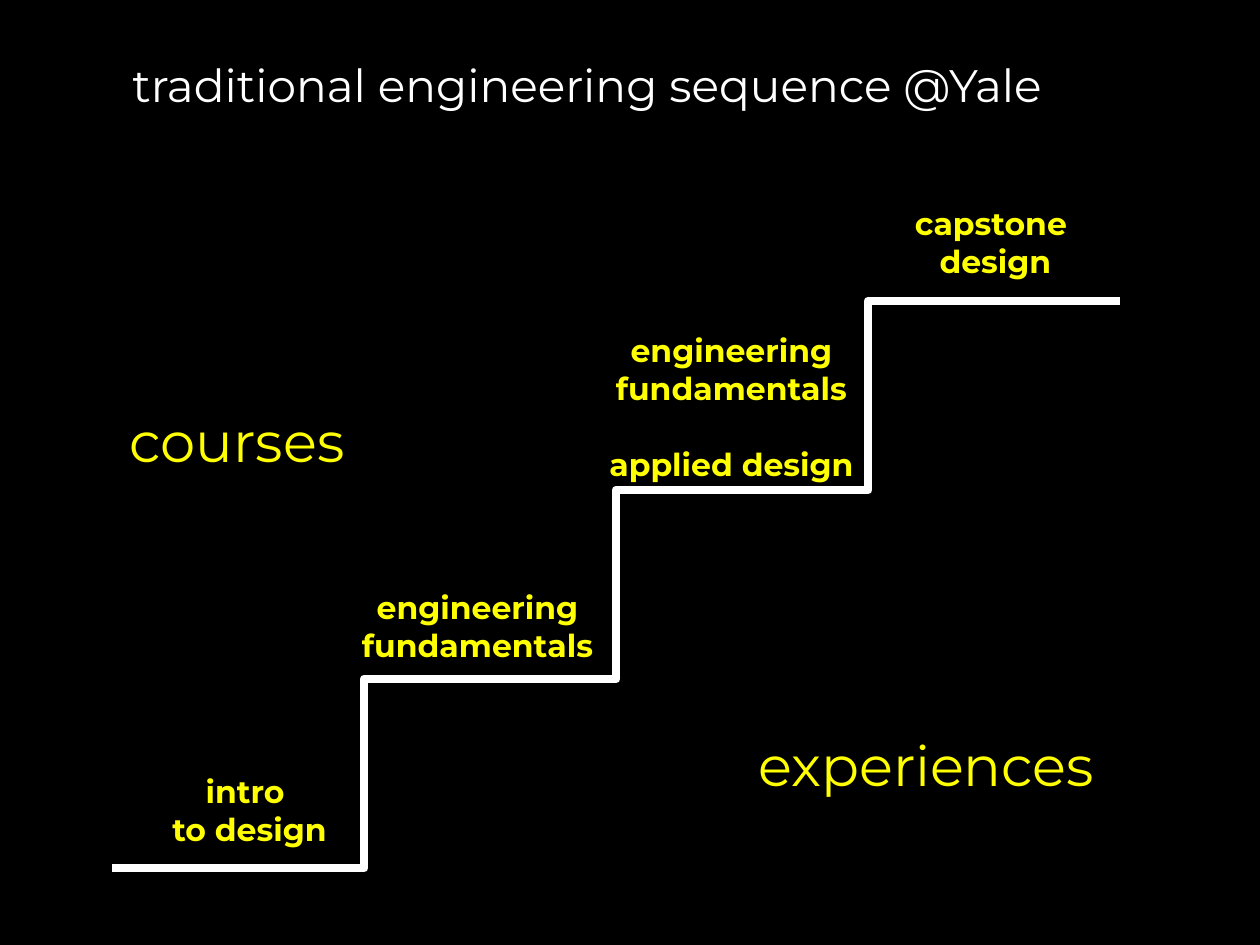
from dataclasses import dataclass

from lxml import etree
from pptx import Presentation
from pptx import util as u
from pptx.dml import color
from pptx.enum import shapes, text
from pptx.oxml import ns


@dataclass(frozen=True)
class Theme:
    face: str = "Montserrat"
    back: str = "000000"
    white: str = "FFFFFF"
    gold: str = "FFFF00"
    head: int = 26
    side: int = 32
    step: int = 18
    line: int = 5


THEME = Theme()
START = (0.89, 6.89)
RUN, RISE = 2.0, 1.5
STEPS = [
    (["intro ", "to design"], (1.24, 6.08, 1.48, 0.71)),
    (["engineering", "fundamentals"], (2.75, 4.62, 2.08, 0.71)),
    (["engineering", "fundamentals", "applied design"], (4.7, 2.58, 2.21, 1.31)),
    (["capstone ", "design"], (6.91, 1.57, 1.98, 0.71)),
]
SIDES = [
    ("courses", (0.93, 3.18, 2.16, 0.64)),
    ("experiences", (5.92, 5.75, 3.21, 0.64)),
]


def inches(box):
    return [u.Inches(v) for v in box]


def apply(item, form):
    for key, value in form.items():
        setattr(item, key, value)


def style(para, size, tint, bold=False, align=text.PP_ALIGN.LEFT):
    para.alignment = align
    for run in para.runs:
        apply(run.font, {"name": THEME.face, "size": u.Pt(size), "bold": bold})
        run.font.color.rgb = color.RGBColor.from_string(tint)


def add_title(slide, words, box):
    title = slide.shapes.title
    apply(title, dict(zip(("left", "top", "width", "height"), inches(box))))
    frame = title.text_frame
    frame.text = words
    apply(frame, {
        "word_wrap": True,
        "auto_size": text.MSO_AUTO_SIZE.NONE,
        "vertical_anchor": text.MSO_ANCHOR.MIDDLE,
    })
    style(frame.paragraphs[0], THEME.head, THEME.white)


def add_text(slide, lines, box):
    frame = slide.shapes.add_textbox(*inches(box)).text_frame
    frame.text = "\n".join(lines)
    apply(frame, {
        "word_wrap": False,
        "auto_size": text.MSO_AUTO_SIZE.SHAPE_TO_FIT_TEXT,
    })
    return frame.paragraphs


def add_side(slide, words, box):
    style(add_text(slide, [words], box)[0], THEME.side, THEME.gold)


def add_label(slide, lines, box):
    paras = add_text(slide, lines, box)
    for para in paras:
        style(para, THEME.step, THEME.gold, True, text.PP_ALIGN.CENTER)
    for para in paras[2:]:
        para.space_before = u.Pt(22)


def add_stairs(slide, start, count):
    for i in range(count):
        x, y = start[0] + i * RUN, start[1] - i * RISE
        ends = inches((x, y, x + 2 * RUN, y - RISE))
        stair = slide.shapes.add_connector(shapes.MSO_CONNECTOR.ELBOW, *ends)
        stair.line.width = u.Pt(THEME.line)
        stair.line.color.rgb = color.RGBColor.from_string(THEME.white)
        etree.SubElement(stair._element.spPr, ns.qn("a:effectLst"))


def main():
    deck = Presentation()
    apply(deck, {"slide_width": u.Inches(10), "slide_height": u.Inches(7.5)})
    slide = deck.slides.add_slide(deck.slide_layouts[5])
    fill = slide.background.fill
    fill.solid()
    fill.fore_color.rgb = color.RGBColor.from_string(THEME.back)
    add_stairs(slide, START, len(STEPS) - 1)
    for lines, box in STEPS:
        add_label(slide, lines, box)
    for words, box in SIDES:
        add_side(slide, words, box)
    add_title(slide, "traditional engineering sequence @Yale", (0.95, 0.17, 8.07, 1))
    deck.save("out.pptx")


if __name__ == "__main__":
    main()
